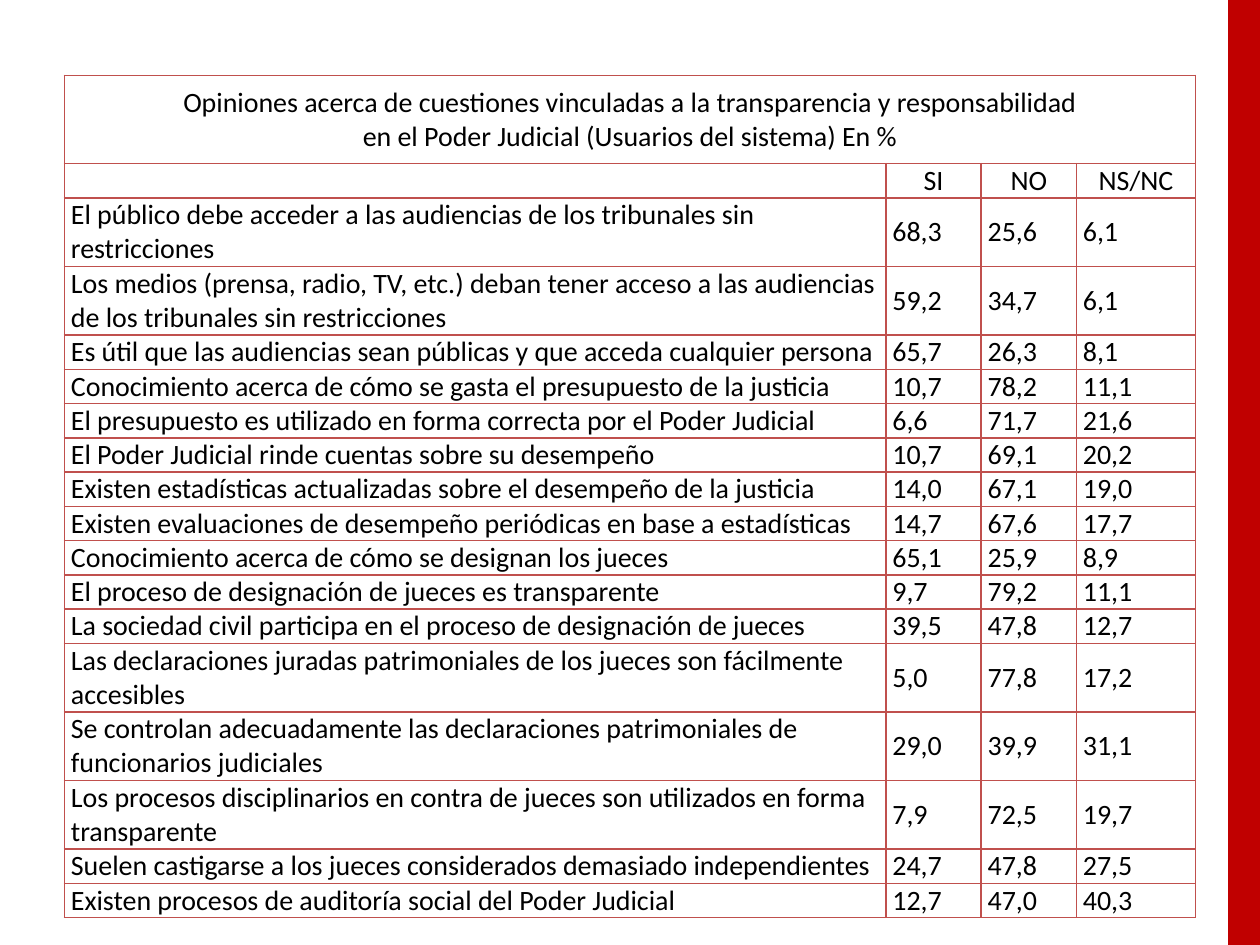
"""Build a slide with a survey table on transparency in the judiciary."""
from dataclasses import dataclass

from lxml import etree
from pptx import Presentation
from pptx import util as u
from pptx.dml.color import RGBColor
from pptx.enum import shapes, text
from pptx.oxml.ns import qn

COLORS = {"text": "000000", "border": "C0504D", "band": "C00000"}
FONT, SIZE = "Calibri", u.Pt(16)
COLUMN_WIDTHS = [16.56, 1.92, 1.92, 2.4]
TITLE_HEIGHT, LINE_HEIGHT = 1.78, 0.68
LINE_CHARACTERS = 72
TITLE = [
    "Opiniones acerca de cuestiones vinculadas a la transparencia y responsabilidad",
    "en el Poder Judicial (Usuarios del sistema) En %",
]
HEADINGS = ["", "SI", "NO", "NS/NC"]


@dataclass
class Opinion:
    """One survey statement and its percentages."""

    label: str
    yes: str
    no: str
    unsure: str

    @property
    def height(self) -> float:
        """Give the row height in centimetres."""
        return LINE_HEIGHT * (2 if len(self.label) > LINE_CHARACTERS else 1)


OPINIONS = [
    Opinion("El público debe acceder a las audiencias de los tribunales sin restricciones", "68,3", "25,6", "6,1"),
    Opinion("Los medios (prensa, radio, TV, etc.) deban tener acceso a las audiencias de los tribunales "
            "sin restricciones", "59,2", "34,7", "6,1"),
    Opinion("Es útil que las audiencias sean públicas y que acceda cualquier persona", "65,7", "26,3", "8,1"),
    Opinion("Conocimiento acerca de cómo se gasta el presupuesto de la justicia", "10,7", "78,2", "11,1"),
    Opinion("El presupuesto es utilizado en forma correcta por el Poder Judicial", "6,6", "71,7", "21,6"),
    Opinion("El Poder Judicial rinde cuentas sobre su desempeño", "10,7", "69,1", "20,2"),
    Opinion("Existen estadísticas actualizadas sobre el desempeño de la justicia", "14,0", "67,1", "19,0"),
    Opinion("Existen evaluaciones de desempeño periódicas en base a estadísticas", "14,7", "67,6", "17,7"),
    Opinion("Conocimiento acerca de cómo se designan los jueces", "65,1", "25,9", "8,9"),
    Opinion("El proceso de designación de jueces es transparente", "9,7", "79,2", "11,1"),
    Opinion("La sociedad civil participa en el proceso de designación de jueces", "39,5", "47,8", "12,7"),
    Opinion("Las declaraciones juradas patrimoniales de los jueces son fácilmente accesibles", "5,0", "77,8", "17,2"),
    Opinion("Se controlan adecuadamente las declaraciones patrimoniales de funcionarios judiciales",
            "29,0", "39,9", "31,1"),
    Opinion("Los procesos disciplinarios en contra de jueces son utilizados en forma transparente",
            "7,9", "72,5", "19,7"),
    Opinion("Suelen castigarse a los jueces considerados demasiado independientes", "24,7", "47,8", "27,5"),
    Opinion("Existen procesos de auditoría social del Poder Judicial", "12,7", "47,0", "40,3"),
]


def style_cell(cell) -> None:
    """Set margins, an empty fill and four thin borders."""
    cell.margin_left = cell.margin_right = u.Cm(0.13)
    cell.margin_top = cell.margin_bottom = u.Cm(0)
    cell.fill.background()
    properties = cell._tc.get_or_add_tcPr()
    for index, side in enumerate(("lnL", "lnR", "lnT", "lnB")):
        line = etree.Element(qn(f"a:{side}"), w=str(u.Pt(1)))
        fill = etree.SubElement(line, qn("a:solidFill"))
        etree.SubElement(fill, qn("a:srgbClr"), val=COLORS["border"])
        properties.insert(index, line)


def write_cell(cell, lines: list[str], align, anchor) -> None:
    """Write one paragraph per line into a cell."""
    cell.vertical_anchor = anchor
    frame = cell.text_frame
    for index, line in enumerate(lines):
        para = frame.add_paragraph() if index else frame.paragraphs[0]
        para.alignment = align
        if not line:
            etree.SubElement(para._p, qn("a:endParaRPr"), sz=str(int(SIZE.pt * 100)))
            continue
        span = para.add_run()
        span.text = line
        span.font.name, span.font.size = FONT, SIZE
        span.font.color.rgb = RGBColor.from_string(COLORS["text"])


def add_opinion_table(page) -> None:
    """Draw the title row, the headings and all opinions."""
    heights = [TITLE_HEIGHT, LINE_HEIGHT] + [opinion.height for opinion in OPINIONS]
    table = page.shapes.add_table(
        len(heights), len(COLUMN_WIDTHS), u.Cm(1.3), u.Cm(1.52),
        u.Cm(sum(COLUMN_WIDTHS)), u.Cm(sum(heights))).table
    table.first_row = table.horz_banding = False
    for column, width in zip(table.columns, COLUMN_WIDTHS):
        column.width = u.Cm(width)
    for row, height in zip(table.rows, heights):
        row.height = u.Cm(height)
    for cell in table.iter_cells():
        style_cell(cell)

    align, anchor = text.PP_ALIGN, text.MSO_ANCHOR
    table.cell(0, 0).merge(table.cell(0, len(COLUMN_WIDTHS) - 1))
    write_cell(table.cell(0, 0), TITLE, align.CENTER, anchor.MIDDLE)
    for column, heading in enumerate(HEADINGS):
        write_cell(table.cell(1, column), [heading], align.CENTER, anchor.BOTTOM)
    for row, opinion in enumerate(OPINIONS, start=2):
        values = (opinion.label, opinion.yes, opinion.no, opinion.unsure)
        for column, value in enumerate(values):
            write_cell(table.cell(row, column), [value], align.LEFT, anchor.MIDDLE)


def add_side_band(page, slide_width: int, slide_height: int) -> None:
    """Draw the red band along the right edge."""
    width = u.Cm(0.64)
    band = page.shapes.add_shape(
        shapes.MSO_SHAPE.RECTANGLE, slide_width - width, 0, width, slide_height)
    band.shadow.inherit = False
    band.fill.solid()
    band.fill.fore_color.rgb = RGBColor.from_string(COLORS["band"])
    band.line.fill.background()


def main() -> None:
    """Create and save the deck."""
    deck = Presentation()
    deck.slide_width, deck.slide_height = u.Cm(25.4), u.Cm(19.05)
    page = deck.slides.add_slide(deck.slide_layouts.get_by_name("Blank"))
    add_opinion_table(page)
    add_side_band(page, deck.slide_width, deck.slide_height)
    deck.save("out.pptx")


if __name__ == "__main__":
    main()
